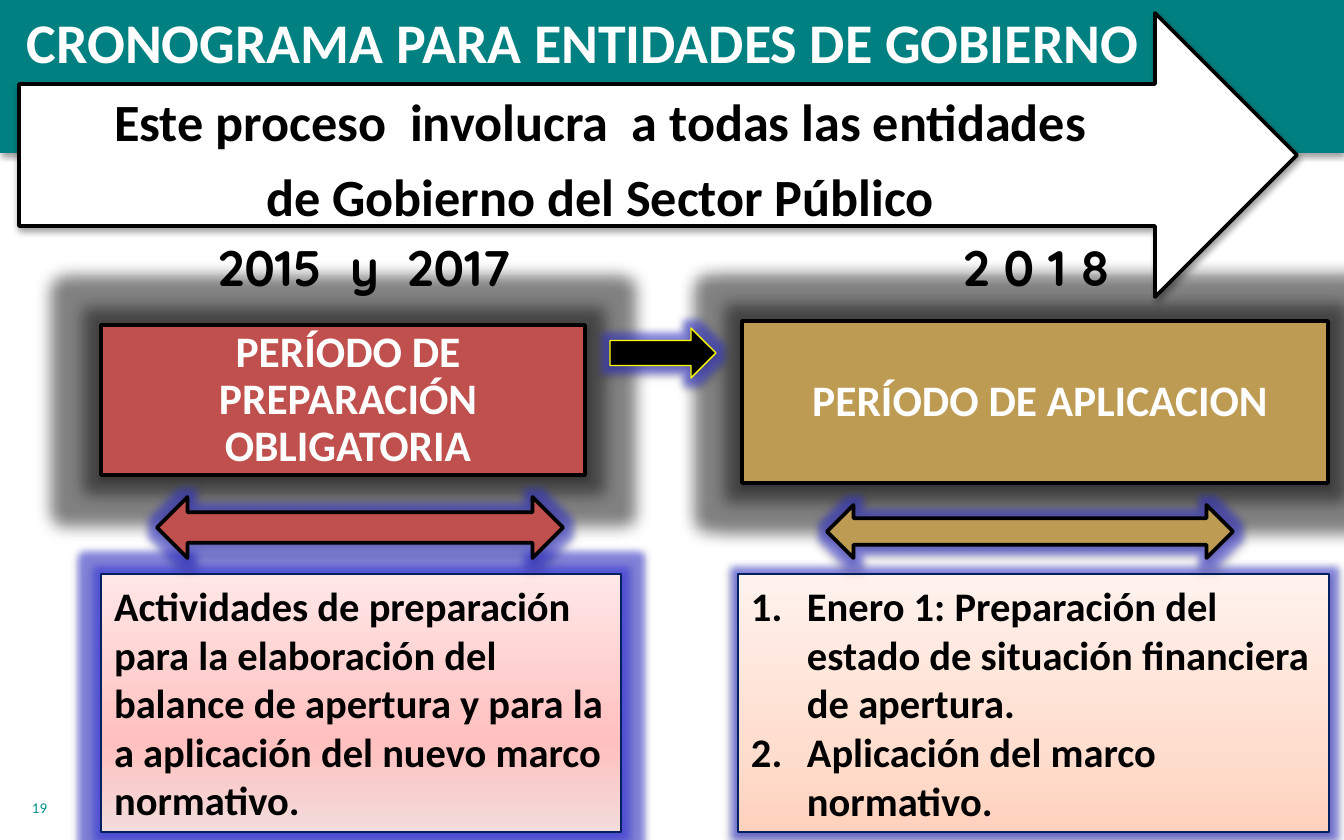
from copy import deepcopy
from dataclasses import dataclass
from typing import Optional

from lxml import etree
from pptx import Presentation
from pptx.dml.color import RGBColor
from pptx.enum.shapes import MSO_SHAPE
from pptx.enum.text import MSO_ANCHOR, MSO_AUTO_SIZE, PP_ALIGN
from pptx.oxml.ns import qn
from pptx.util import Emu, Pt

EMU_PER_PX = 914400 / 134.4
RECTANGLE, RIGHT_ARROW, DOUBLE_ARROW = (
    MSO_SHAPE.RECTANGLE, MSO_SHAPE.RIGHT_ARROW, MSO_SHAPE.LEFT_RIGHT_ARROW)
LEFT, CENTER = PP_ALIGN.LEFT, PP_ALIGN.CENTER
TOP, MIDDLE = MSO_ANCHOR.TOP, MSO_ANCHOR.MIDDLE

COLORS = {
    "white": "FFFFFF", "black": "000000", "teal": "008080", "number": "00918E",
    "red": "C0504D", "gold": "BD9B53", "navy": "002060", "yellow": "FFFF00",
    "blue": "3333E0",
}
PINK_STOPS = ((0, "F2DCDB"), (0.35, "FFC0BF"), (1, "FFE7E7"))
PEACH_STOPS = ((0, "FFD2BD"), (0.35, "FFDED0"), (1, "FFF2ED"))


@dataclass(frozen=True)
class Box:
    left: int
    top: int
    width: int
    height: int


@dataclass(frozen=True)
class TextStyle:
    size: float
    color: str = "black"
    font: str = "Calibri"
    bold: bool = True
    align: PP_ALIGN = LEFT
    anchor: MSO_ANCHOR = TOP
    margins: tuple = (13, 7, 13, 7)
    line_spacing: float = 1.0
    space_after: int = 0


@dataclass(frozen=True)
class Effect:
    glow_color: Optional[str] = None
    glow_points: float = 0
    glow_alpha: int = 0
    shadow: bool = True


@dataclass(frozen=True)
class Block:
    kind: MSO_SHAPE
    box: Box
    fill: str
    line: str
    line_width: float
    effect: Effect
    text: str = ""


GRAY_GLOW = Effect("black", 17, 40)
BLUE_GLOW = Effect("blue", 8, 50)
SHADOW = Effect()

TITLE = TextStyle(30, "white", align=CENTER, anchor=MIDDLE)
PERIOD = TextStyle(23.3, "white", align=CENTER, anchor=MIDDLE,
                   margins=(69, 5, 59, 5), line_spacing=0.9)
YEAR = TextStyle(26.7, font="Quicksand", align=CENTER)
DETAIL = TextStyle(21.7)
SCOPE = TextStyle(28, align=CENTER, anchor=MIDDLE, margins=(0, 0, 0, 0),
                  line_spacing=0.9, space_after=10)
NUMBER = TextStyle(8, "number", bold=False)

BLOCKS = (
    Block(RECTANGLE, Box(101, 325, 484, 150), "red", "black", 2, GRAY_GLOW,
          "PERÍODO DE PREPARACIÓN OBLIGATORIA"),
    Block(RECTANGLE, Box(742, 321, 586, 162), "gold", "black", 2, GRAY_GLOW,
          "PERÍODO DE APLICACION"),
    Block(RIGHT_ARROW, Box(610, 328, 106, 50), "black", "yellow", 0.75, BLUE_GLOW),
    Block(DOUBLE_ARROW, Box(157, 497, 406, 61), "red", "black", 2, BLUE_GLOW),
    Block(DOUBLE_ARROW, Box(827, 505, 406, 53), "gold", "black", 2, BLUE_GLOW),
    Block(RIGHT_ARROW, Box(19, 13, 1278, 284), "white", "black", 2, SHADOW),
)
LABELS = (
    (Box(196, 230, 337, 74), ["2015  y  2017"], YEAR),
    (Box(935, 230, 203, 74), ["2 0 1 8"], YEAR),
    (Box(31, 96, 1138, 132), ["Este proceso  involucra  a todas las entidades",
                              "de Gobierno del Sector Público"], SCOPE),
    (Box(19, 792, 280, 40), ["19"], NUMBER),
)
STEPS = ["Enero 1: Preparación del estado de situación financiera de apertura.",
         "Aplicación del marco normativo."]
ACTIVITIES = ["Actividades de preparación para la elaboración del balance de apertura "
              "y para la a aplicación del nuevo marco normativo."]


def px(value: int) -> Emu:
    return Emu(round(value * EMU_PER_PX))


def rgb(name: str) -> RGBColor:
    return RGBColor.from_string(COLORS[name])


def set_all(target, values: dict) -> None:
    for name, value in values.items():
        setattr(target, name, value)


def geometry(box: Box) -> tuple:
    return px(box.left), px(box.top), px(box.width), px(box.height)


def place(shape, box: Box) -> None:
    set_all(shape, dict(zip(("left", "top", "width", "height"), geometry(box))))


def add_color(parent, name: str, alpha: int) -> None:
    color = etree.SubElement(parent, qn("a:srgbClr"), val=COLORS[name])
    etree.SubElement(color, qn("a:alpha"), val=str(alpha * 1000))


def apply_effect(shape, effect: Effect) -> None:
    shape.shadow.inherit = False
    effects = shape.element.spPr.find(qn("a:effectLst"))
    if effect.glow_color:
        glow = etree.SubElement(effects, qn("a:glow"), rad=str(Pt(effect.glow_points)))
        add_color(glow, effect.glow_color, effect.glow_alpha)
    if effect.shadow:
        shadow = etree.SubElement(
            effects, qn("a:outerShdw"), blurRad=str(Pt(3.1)), dist=str(Pt(1.6)),
            dir="5400000", rotWithShape="0")
        add_color(shadow, "black", 38)


def apply_outline(shape, color: str, width: float) -> None:
    shape.line.color.rgb = rgb(color)
    shape.line.width = Pt(width)


def write_text(shape, texts: list, style: TextStyle, numbered: bool = False) -> None:
    frame = shape.text_frame
    names = ("margin_left", "margin_top", "margin_right", "margin_bottom")
    set_all(frame, {"word_wrap": True, "auto_size": MSO_AUTO_SIZE.NONE,
                    "vertical_anchor": style.anchor,
                    **dict(zip(names, map(px, style.margins)))})
    for index, text in enumerate(texts):
        paragraph = frame.add_paragraph() if index else frame.paragraphs[0]
        run = paragraph.add_run()
        run.text = text
        set_all(paragraph, {"alignment": style.align, "line_spacing": style.line_spacing,
                            "space_before": Pt(0), "space_after": Pt(style.space_after)})
        if numbered:
            properties = paragraph._p.get_or_add_pPr()
            properties.set("marL", str(px(56)))
            properties.set("indent", str(px(-56)))
            etree.SubElement(properties, qn("a:buFont"), typeface="+mj-lt")
            etree.SubElement(properties, qn("a:buAutoNum"), type="arabicPeriod")
        set_all(run.font, {"size": Pt(style.size), "name": style.font, "bold": style.bold})
        run.font.color.rgb = rgb(style.color)


def style_detail(shape, stops: tuple) -> None:
    """Give a detail panel its upward gradient, thin outline and glow."""
    shape.fill.gradient()
    shape.fill.gradient_angle = 90
    stop_list = shape.element.spPr.find(qn("a:gradFill")).find(qn("a:gsLst"))
    stop_list.append(deepcopy(stop_list[0]))
    for stop, (position, color) in zip(shape.fill.gradient_stops, stops):
        stop.position = position
        stop.color.rgb = RGBColor.from_string(color)
    apply_outline(shape, "navy", 0.75)
    apply_effect(shape, BLUE_GLOW)


def add_block(slide, block: Block) -> None:
    shape = slide.shapes.add_shape(block.kind, *geometry(block.box))
    shape.fill.solid()
    shape.fill.fore_color.rgb = rgb(block.fill)
    apply_outline(shape, block.line, block.line_width)
    apply_effect(shape, block.effect)
    if block.text:
        write_text(shape, [block.text], PERIOD)


def add_band(slide) -> None:
    """Draw the teal header behind everything else."""
    band = slide.shapes.add_shape(RECTANGLE, *geometry(Box(0, 0, 1344, 153)))
    band.fill.solid()
    band.fill.fore_color.rgb = rgb("teal")
    band.line.fill.background()
    apply_effect(band, SHADOW)
    band.element.getparent().insert(2, band.element)


def main() -> None:
    presentation = Presentation()
    set_all(presentation, {"slide_width": px(1344), "slide_height": px(840)})
    slide = presentation.slides.add_slide(presentation.slide_layouts[1])
    add_band(slide)

    title, steps = slide.shapes.title, slide.placeholders[1]
    place(title, Box(5, 0, 1156, 82))
    write_text(title, ["CRONOGRAMA PARA ENTIDADES DE GOBIERNO"], TITLE)
    place(steps, Box(738, 574, 591, 258))
    style_detail(steps, PEACH_STOPS)
    write_text(steps, STEPS, DETAIL, numbered=True)
    activities = slide.shapes.add_shape(RECTANGLE, *geometry(Box(101, 574, 520, 258)))
    style_detail(activities, PINK_STOPS)
    write_text(activities, ACTIVITIES, DETAIL)

    for block in BLOCKS:
        add_block(slide, block)
    for box, texts, style in LABELS:
        write_text(slide.shapes.add_textbox(*geometry(box)), texts, style)
    presentation.save("out.pptx")


if __name__ == "__main__":
    main()
